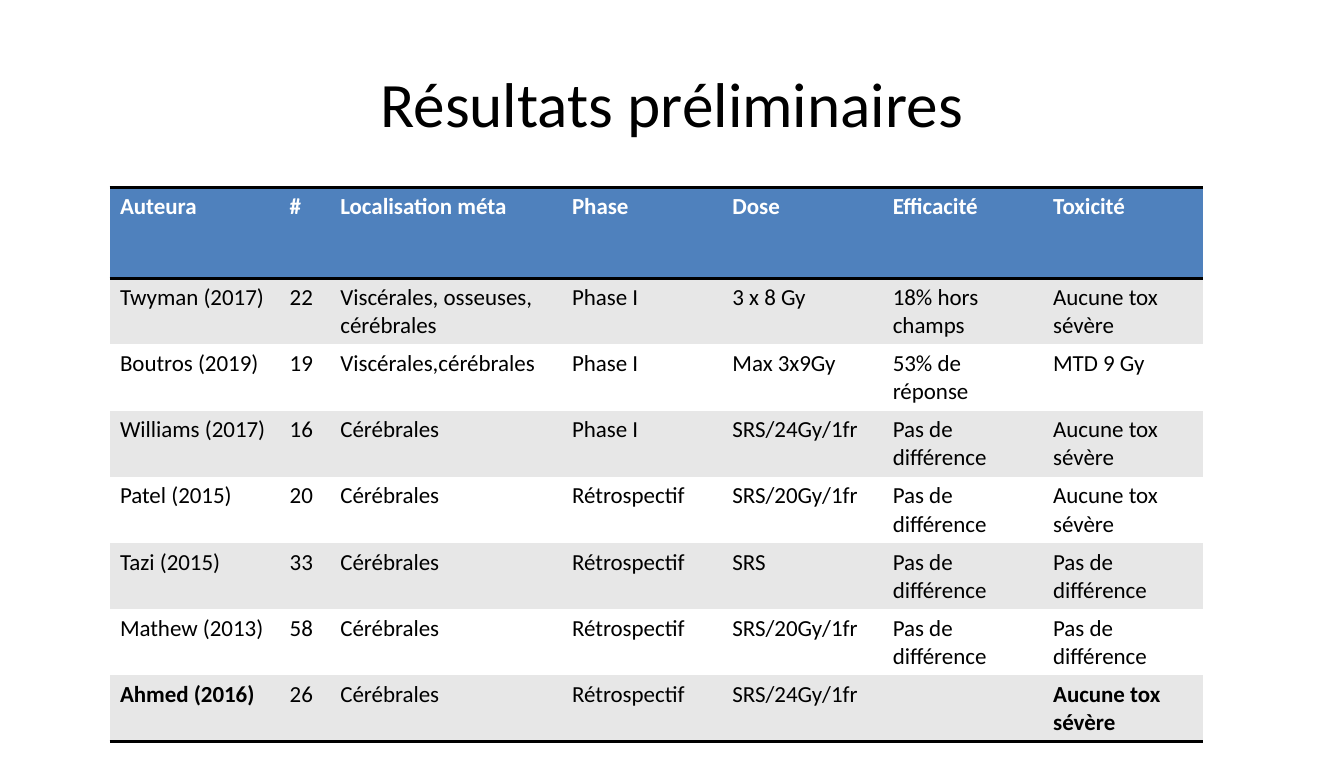
from dataclasses import dataclass

from lxml.etree import SubElement
from pptx import Presentation
from pptx.dml.color import RGBColor as Rgb
from pptx.enum.text import MSO_ANCHOR as Anchor, PP_ALIGN as Align
from pptx.oxml.ns import qn
from pptx.util import Inches, Pt

TITLE = "Résultats préliminaires"
HEADINGS = ("Auteura", "#", "Localisation méta", "Phase", "Dose", "Efficacité", "Toxicité")
STUDIES = [
    ("Twyman (2017)", "22", "Viscérales, osseuses, cérébrales", "Phase I", "3 x 8 Gy",
     "18% hors champs", "Aucune tox sévère"),
    ("Boutros (2019)", "19", "Viscérales,cérébrales", "Phase I", "Max 3x9Gy",
     "53% de réponse", "MTD 9 Gy"),
    ("Williams (2017)", "16", "Cérébrales", "Phase I", "SRS/24Gy/1fr",
     "Pas de différence", "Aucune tox sévère"),
    ("Patel (2015)", "20", "Cérébrales", "Rétrospectif", "SRS/20Gy/1fr",
     "Pas de différence", "Aucune tox sévère"),
    ("Tazi (2015)", "33", "Cérébrales", "Rétrospectif", "SRS",
     "Pas de différence", "Pas de différence"),
    ("Mathew (2013)", "58", "Cérébrales", "Rétrospectif", "SRS/20Gy/1fr",
     "Pas de différence", "Pas de différence"),
    ("Ahmed (2016)", "26", "Cérébrales", "Rétrospectif", "SRS/24Gy/1fr",
     "", "Aucune tox sévère"),
]
EMPHASISED = {("Ahmed (2016)", "Auteura"), ("Ahmed (2016)", "Toxicité")}

COLUMN_WIDTHS = (1.64, 0.49, 2.24) + (1.55,) * 4
HEADING_HEIGHT, STUDY_HEIGHT = 0.88, 0.64
NO_STYLE_NO_GRID = "{2D5ABB26-0587-4C30-8999-92F81FD0307C}"


@dataclass(frozen=True)
class Theme:
    font: str = "Calibri"
    title_size: int = 44
    table_size: int = 16
    rule_width: int = 2
    ink: str = "000000"
    heading_ink: str = "FFFFFF"
    heading_fill: str = "4F81BD"
    bands: tuple = ("E7E7E7", "FFFFFF")


THEME = Theme()


def write(paragraph, text, size, color, bold=False):
    run = paragraph.add_run()
    run.text = text
    run.font.name = THEME.font
    run.font.size = Pt(size)
    run.font.bold = bold
    run.font.color.rgb = Rgb.from_string(color)


def rule(cell, side):
    line = SubElement(cell._tc.get_or_add_tcPr(), qn(f"a:{side}"), w=str(Pt(THEME.rule_width)))
    fill = SubElement(line, qn("a:solidFill"))
    SubElement(fill, qn("a:srgbClr"), val=THEME.ink)


def add_title(slide):
    box = slide.shapes.add_textbox(Inches(0.65), Inches(0.36), Inches(11.69), Inches(1.25))
    frame = box.text_frame
    frame.word_wrap = True
    frame.vertical_anchor = Anchor.MIDDLE
    frame.paragraphs[0].alignment = Align.CENTER
    write(frame.paragraphs[0], TITLE, THEME.title_size, THEME.ink)


def add_studies(slide):
    rows = [HEADINGS, *STUDIES]
    heights = [HEADING_HEIGHT] + [STUDY_HEIGHT] * len(STUDIES)
    results = slide.shapes.add_table(
        len(rows), len(HEADINGS), Inches(1.06), Inches(1.81),
        Inches(sum(COLUMN_WIDTHS)), Inches(sum(heights))).table
    results._tbl.tblPr.find(qn("a:tableStyleId")).text = NO_STYLE_NO_GRID
    for column, width in zip(results.columns, COLUMN_WIDTHS):
        column.width = Inches(width)
    for index, (row, height, entries) in enumerate(zip(results.rows, heights, rows)):
        row.height = Inches(height)
        is_heading = index == 0
        band = THEME.heading_fill if is_heading else THEME.bands[(index - 1) % 2]
        ink = THEME.heading_ink if is_heading else THEME.ink
        for cell, heading, entry in zip(row.cells, HEADINGS, entries):
            if is_heading:
                rule(cell, "lnT")
            if index in (0, len(STUDIES)):
                rule(cell, "lnB")
            cell.fill.solid()
            cell.fill.fore_color.rgb = Rgb.from_string(band)
            if entry:
                bold = is_heading or (entries[0], heading) in EMPHASISED
                write(cell.text_frame.paragraphs[0], entry, THEME.table_size, ink, bold)


def main():
    deck = Presentation()
    deck.slide_width, deck.slide_height = Inches(12.99), Inches(7.5)
    slide = deck.slides.add_slide(deck.slide_layouts[6])
    add_title(slide)
    add_studies(slide)
    deck.save("out.pptx")


if __name__ == "__main__":
    main()
